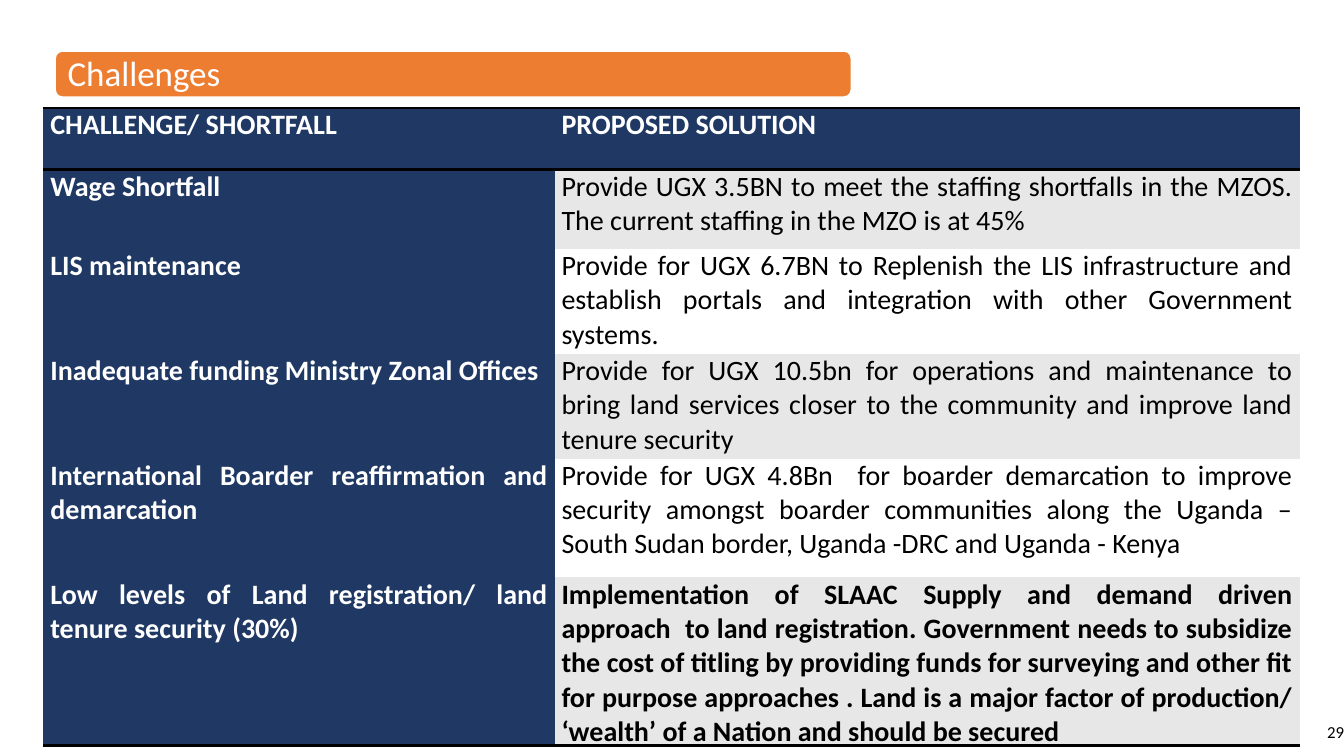
from lxml.etree import SubElement
from pptx import Presentation
from pptx.dml.color import RGBColor
from pptx.enum.shapes import MSO_SHAPE
from pptx.enum.text import MSO_ANCHOR, PP_ALIGN
from pptx.oxml.ns import qn
from pptx.util import Inches, Pt

NAVY, ORANGE, GREY, WHITE, BLACK = "203864", "ED7D31", "E7E7E7", "FFFFFF", "000000"
NO_STYLE = "{2D5ABB26-0587-4C30-8999-92F81FD0307C}"

COLUMN_WIDTHS = [5.07, 7.39]
ROW_HEIGHTS = [0.61, 0.79, 1.04, 1.04, 1.18, 1.39]
ROWS = [
    ("CHALLENGE/ SHORTFALL", "PROPOSED SOLUTION"),
    ("Wage Shortfall",
     "Provide UGX 3.5BN to meet the staffing shortfalls in the MZOS. "
     "The current staffing in the MZO is at 45%"),
    ("LIS maintenance",
     "Provide for UGX 6.7BN to Replenish the LIS infrastructure and "
     "establish portals and integration with other Government systems."),
    ("Inadequate funding Ministry Zonal Offices",
     "Provide for UGX 10.5bn for operations and maintenance to bring land "
     "services closer to the community and improve land tenure security"),
    ("International Boarder reaffirmation and demarcation",
     "Provide for UGX 4.8Bn  for boarder demarcation to improve security "
     "amongst boarder communities along the Uganda – South Sudan border, "
     "Uganda -DRC and Uganda - Kenya"),
    ("Low levels of Land registration/ land tenure security (30%)",
     "Implementation of SLAAC Supply and demand driven approach  to land "
     "registration. Government needs to subsidize the cost of titling by "
     "providing funds for surveying and other fit for purpose approaches . "
     "Land is a major factor of production/ ‘wealth’ of a Nation and should "
     "be secured"),
]


def rgb(value):
    return RGBColor.from_string(value)


class SlideBuilder:
    font = "Calibri"

    def __init__(self, slide):
        self.slide = slide

    def put_text(self, tf, text, size, color, align, bold=False):
        tf.text = text
        p = tf.paragraphs[0]
        p.alignment = align
        font = p.runs[0].font
        font.name, font.size, font.bold = self.font, Pt(size), bold
        font.color.rgb = rgb(color)
        return p

    def frame(self, tf, inset):
        """Centre the text vertically with equal insets on all sides."""
        tf.word_wrap = True
        tf.vertical_anchor = MSO_ANCHOR.MIDDLE
        tf.margin_left = tf.margin_right = Inches(inset)
        tf.margin_top = tf.margin_bottom = Inches(inset)

    def title(self, text, left, top, width, height):
        sp = self.slide.shapes.title
        sp.left, sp.top = Inches(left), Inches(top)
        sp.width, sp.height = Inches(width), Inches(height)
        self.frame(sp.text_frame, 0.1)
        p = self.put_text(sp.text_frame, text, 25, WHITE, PP_ALIGN.LEFT)
        p.line_spacing = 0.9

    def title_bar(self, left, top, width, height):
        """Draw the rounded bar and place it behind the title."""
        sp = self.slide.shapes.add_shape(
            MSO_SHAPE.ROUNDED_RECTANGLE,
            Inches(left), Inches(top), Inches(width), Inches(height))
        sp.shadow.inherit = False
        sp.fill.solid()
        sp.fill.fore_color.rgb = rgb(ORANGE)
        sp.line.color.rgb = rgb(WHITE)
        sp.line.width = Pt(2)
        self.slide.shapes.title._element.addprevious(sp._element)

    def page_number(self, text, left, top, width, height):
        sp = self.slide.shapes.add_textbox(
            Inches(left), Inches(top), Inches(width), Inches(height))
        self.frame(sp.text_frame, 0)
        self.put_text(sp.text_frame, text, 12, BLACK, PP_ALIGN.RIGHT)

    def border(self, cell, side):
        ln = SubElement(cell._tc.get_or_add_tcPr(), qn(f"a:{side}"), w=str(Pt(2)))
        fill = SubElement(ln, qn("a:solidFill"))
        SubElement(fill, qn("a:srgbClr"), val=BLACK)

    def cell(self, cell, text, fill, color, bold, sides):
        cell.margin_left = cell.margin_right = Inches(0.07)
        cell.margin_top = cell.margin_bottom = 0
        self.put_text(cell.text_frame, text, 20, color, PP_ALIGN.JUSTIFY, bold)
        for side in sides:
            self.border(cell, side)
        cell.fill.solid()
        cell.fill.fore_color.rgb = rgb(fill)

    def table(self, rows, left, top, widths, heights):
        table = self.slide.shapes.add_table(
            len(rows), len(widths), Inches(left), Inches(top),
            Inches(sum(widths)), Inches(sum(heights))).table
        table._tbl.tblPr.find(qn("a:tableStyleId")).text = NO_STYLE
        for column, width in zip(table.columns, widths):
            column.width = Inches(width)
        last = len(rows) - 1
        for i, row in enumerate(rows):
            table.rows[i].height = Inches(heights[i])
            sides = {0: ("lnT", "lnB"), last: ("lnB",)}.get(i, ())
            for j, text in enumerate(row):
                heading = i == 0 or j == 0
                band = GREY if i % 2 else WHITE
                self.cell(table.cell(i, j), text,
                          NAVY if heading else band,
                          WHITE if heading else BLACK,
                          heading or i == last, sides)


def main():
    prs = Presentation()
    prs.slide_width, prs.slide_height = Inches(13.33), Inches(7.5)
    s = SlideBuilder(prs.slides.add_slide(prs.slide_layouts[5]))
    s.title("Challenges", 0.57, 0.53, 7.86, 0.43)
    s.title_bar(0.54, 0.5, 7.91, 0.47)
    s.page_number("29", 12.59, 7.16, 0.74, 0.2)
    s.table(ROWS, 0.43, 1.07, COLUMN_WIDTHS, ROW_HEIGHTS)
    prs.save("out.pptx")


if __name__ == "__main__":
    main()
